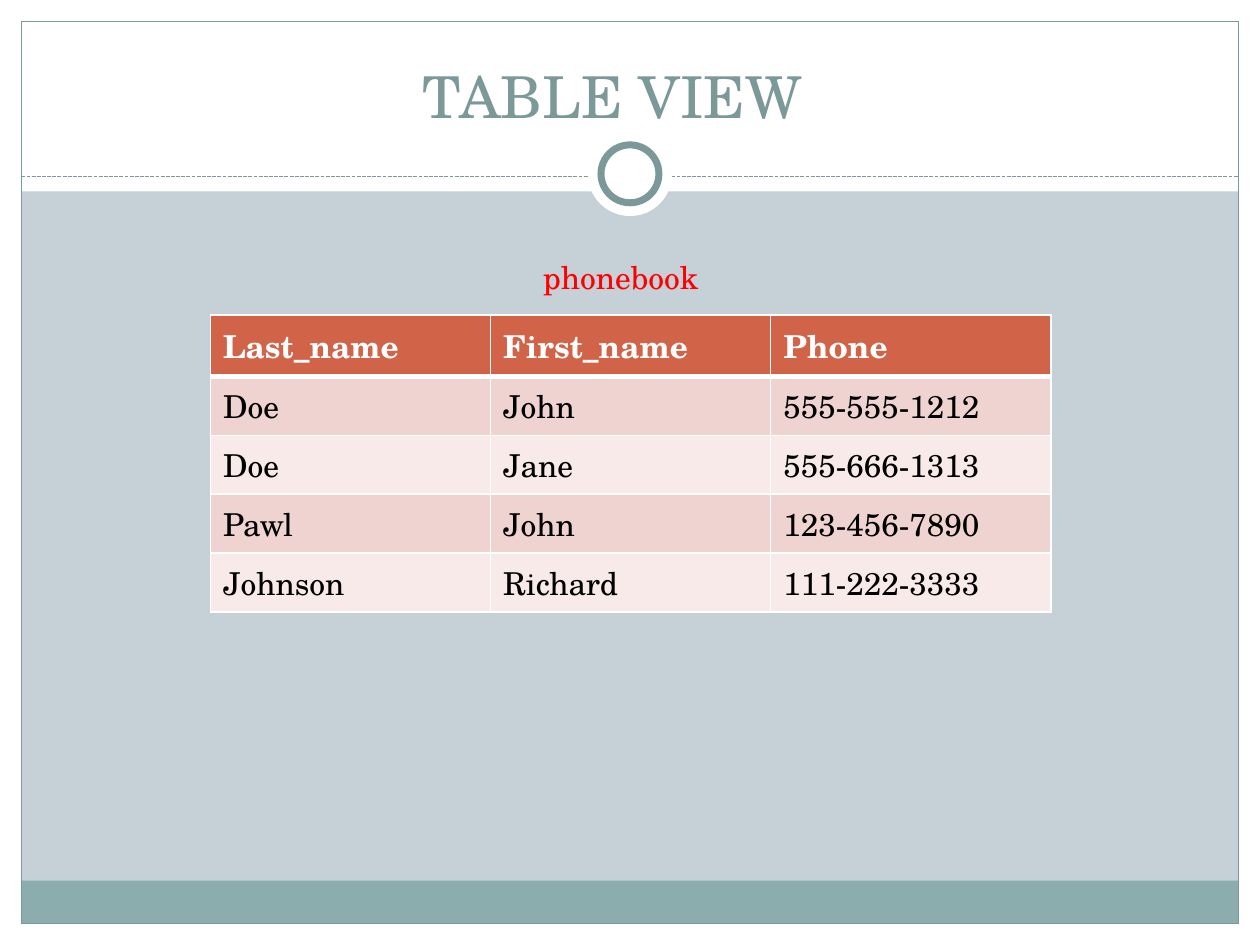
from lxml import etree
from pptx import Presentation
from pptx.dml.color import RGBColor
from pptx.enum.dml import MSO_LINE
from pptx.enum.shapes import MSO_CONNECTOR, MSO_SHAPE
from pptx.enum.text import MSO_ANCHOR, MSO_AUTO_SIZE, PP_ALIGN
from pptx.oxml.ns import qn
from pptx.util import Inches, Pt

RECTANGLE, OVAL = MSO_SHAPE.RECTANGLE, MSO_SHAPE.OVAL
STRAIGHT, DASH = MSO_CONNECTOR.STRAIGHT, MSO_LINE.SQUARE_DOT
CENTER, LEFT = PP_ALIGN.CENTER, PP_ALIGN.LEFT
BOTTOM, FIT_SHAPE = MSO_ANCHOR.BOTTOM, MSO_AUTO_SIZE.SHAPE_TO_FIT_TEXT

# Content
TITLE = "TABLE VIEW"
CAPTION = "phonebook"
PHONEBOOK = [
    ("Last_name", "First_name", "Phone"),
    ("Doe", "John", "555-555-1212"),
    ("Doe", "Jane", "555-666-1313"),
    ("Pawl", "John", "123-456-7890"),
    ("Johnson", "Richard", "111-222-3333"),
]

THEME = {
    "font": "TeX Gyre Schola", "title_size": 33, "text_size": 18,
    "background": "C5D1D7", "white": "FFFFFF", "black": "000000",
    "accent": "7C999A", "footer": "8CADAE", "caption": "FF0000",
    "header": "D16349", "bands": ("EED3D0", "F7EAE9"),
}

# Layout in inches
WIDTH, HEIGHT, MARGIN = 10, 7.5, 0.17
TOP_BAND, DIVIDER = 1.52, 1.4
RING_CENTER = (5, 1.38)
TABLE_LEFT, TABLE_TOP, TABLE_WIDTH, ROW_HEIGHT = 1.67, 2.5, 6.67, 0.41


def color(name):
    return RGBColor.from_string(THEME.get(name, name))


def write_text(frame, text, size=THEME["text_size"], fill="black", bold=False, align=LEFT):
    paragraph = frame.paragraphs[0]
    paragraph.alignment = align
    run = paragraph.add_run()
    run.text = text
    run.font.name = THEME["font"]
    run.font.size = Pt(size)
    run.font.bold = bold
    run.font.color.rgb = color(fill)


def add_panel(slide, kind, box, fill=None, line=None, line_width=0.75):
    shape = slide.shapes.add_shape(kind, *map(Inches, box))
    shape.shadow.inherit = False
    if fill:
        shape.fill.solid()
        shape.fill.fore_color.rgb = color(fill)
    else:
        shape.fill.background()
    if line:
        shape.line.color.rgb = color(line)
        shape.line.width = Pt(line_width)
    else:
        shape.line.fill.background()


def add_circle(slide, diameter, **style):
    left, top = (middle - diameter / 2 for middle in RING_CENTER)
    add_panel(slide, OVAL, (left, top, diameter, diameter), **style)


def add_borders(cell, bottom_width):
    properties = cell._tc.get_or_add_tcPr()
    sides = {"lnL": 1, "lnR": 1, "lnT": 1, "lnB": bottom_width}
    for position, (side, width) in enumerate(sides.items()):
        border = etree.Element(qn(f"a:{side}"), w=str(Pt(width)))
        fill = etree.SubElement(border, qn("a:solidFill"))
        etree.SubElement(fill, qn("a:srgbClr"), val=THEME["white"])
        properties.insert(position, border)


def add_frame(slide):
    inner_width, inner_height = WIDTH - 2 * MARGIN, HEIGHT - 2 * MARGIN
    # White margins and top band
    for box in (
        (0, HEIGHT - MARGIN, WIDTH, MARGIN),
        (0, 0, WIDTH, TOP_BAND),
        (0, 0, MARGIN, HEIGHT),
        (WIDTH - MARGIN, 0, MARGIN, HEIGHT),
    ):
        add_panel(slide, RECTANGLE, box, fill="white")
    # Footer bar and outline
    add_panel(slide, RECTANGLE, (MARGIN, 6.99, inner_width, 0.34), fill="footer")
    add_panel(slide, RECTANGLE, (MARGIN, MARGIN, inner_width, inner_height), line="accent")
    # Dashed divider with ring
    divider = slide.shapes.add_connector(
        STRAIGHT, *map(Inches, (MARGIN, DIVIDER, WIDTH - MARGIN, DIVIDER)))
    divider.line.color.rgb = color("accent")
    divider.line.width = Pt(0.75)
    divider.line.dash_style = DASH
    etree.SubElement(divider._element.spPr, qn("a:effectLst"))
    add_circle(slide, 0.67, fill="white")
    add_circle(slide, 0.46, fill="white", line="accent", line_width=4)


def add_title(slide):
    title = slide.shapes.title
    title.left, title.top, title.width, title.height = map(Inches, (0.33, 0.25, 9.33, 0.83))
    frame = title.text_frame
    frame.vertical_anchor = BOTTOM
    frame.margin_right = Inches(0.37)  # sets the title slightly left of centre
    write_text(frame, TITLE, size=THEME["title_size"], fill="accent", align=CENTER)
    # Bring the title in front of the white band
    slide.shapes[-1].element.addnext(title.element)


def add_phonebook(slide):
    row_count, column_count = len(PHONEBOOK), len(PHONEBOOK[0])
    table = slide.shapes.add_table(
        row_count, column_count, Inches(TABLE_LEFT), Inches(TABLE_TOP),
        Inches(TABLE_WIDTH), Inches(ROW_HEIGHT * row_count)).table
    for row_index, row in enumerate(PHONEBOOK):
        is_header = row_index == 0
        fill = "header" if is_header else THEME["bands"][(row_index - 1) % 2]
        for column_index, text in enumerate(row):
            cell = table.cell(row_index, column_index)
            cell.fill.solid()
            cell.fill.fore_color.rgb = color(fill)
            add_borders(cell, bottom_width=3 if is_header else 1)
            write_text(cell.text_frame, text, bold=is_header,
                       fill="white" if is_header else "black")


def add_caption(slide):
    caption = slide.shapes.add_textbox(*map(Inches, (4.21, 2, 1.45, 0.4)))
    caption.text_frame.word_wrap = False
    caption.text_frame.auto_size = FIT_SHAPE
    write_text(caption.text_frame, CAPTION, fill="caption")


def main():
    presentation = Presentation()
    presentation.slide_width, presentation.slide_height = Inches(WIDTH), Inches(HEIGHT)
    slide = presentation.slides.add_slide(presentation.slide_layouts[5])
    slide.background.fill.solid()
    slide.background.fill.fore_color.rgb = color("background")
    add_frame(slide)
    add_title(slide)
    add_phonebook(slide)
    add_caption(slide)
    presentation.save("out.pptx")


if __name__ == "__main__":
    main()
